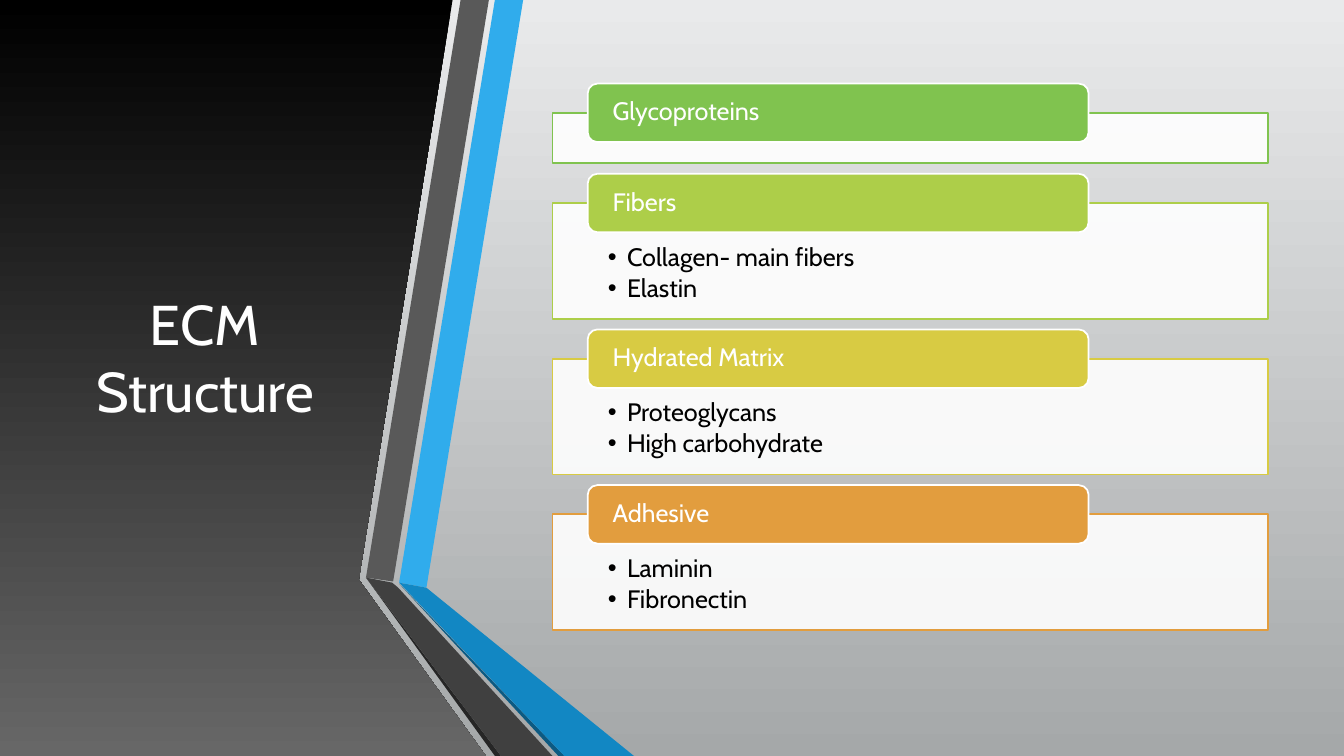
from dataclasses import dataclass

from lxml import etree
from pptx import Presentation
from pptx.dml.color import RGBColor
from pptx.enum import shapes, text
from pptx.oxml import ns
from pptx.util import Pt


@dataclass(frozen=True)
class Theme:
    font: str = "Cabin"
    title_size: float = 40
    body_size: float = 18
    outline: float = 1.25
    white: str = "FFFFFF"
    black: str = "000000"
    backdrop: tuple = ("E9EAEB", "A5A8A9")
    panel: tuple = ("000000", "676767")
    blue: str = "30ACEC"
    blue_low: str = "1287C3"
    blue_edge: str = "0C5A82"
    grey: str = "595959"
    grey_low: str = "404040"
    grey_edge: str = "262626"


THEME = Theme()

PANEL = [(0, 0), (323.3, 0), (256.3, 414), (347, 540), (0, 540)]
RIBBONS = [
    (THEME.blue, [(285.1, 416.2), (304.6, 419.8), (373.7, 0), (353.5, 0)]),
    (THEME.grey, [(349.2, 0), (329, 0), (261.4, 412.6), (280.8, 415.4)]),
    (THEME.grey_edge, [(261.4, 412.6), (353.5, 540), (357.8, 540)]),
    (THEME.blue_edge, [(285.1, 416.9), (398.9, 540), (403.2, 540)]),
    (THEME.blue_low, [(285.1, 416.2), (403.2, 540), (452.9, 540), (304.6, 419.8)]),
    (THEME.grey_low, [(394.6, 540), (284.4, 419.8), (280.1, 416.2), (261.4, 412.6),
                      (357.8, 540)]),
]
CARDS = [
    ("Glycoproteins", "80C34F", []),
    ("Fibers", "ADCE49", ["Collagen- main fibers", "Elastin"]),
    ("Hydrated Matrix", "D8CB43", ["Proteoglycans", "High carbohydrate"]),
    ("Adhesive", "E29D3E", ["Laminin", "Fibronectin"]),
]
CARD_LEFT, CARD_WIDTH, CARD_GAP = 394.6, 511.2, 28.4
FIRST_CARD_TOP, EMPTY_HEIGHT, LIST_HEIGHT = 80.6, 36, 82.8
TAB_LEFT, TAB_WIDTH, TAB_HEIGHT = 419.8, 357.8, 41.8


def apply(target, values):
    for name, value in values.items():
        setattr(target, name, value)


def shade(fill, colours):
    """Fill from top to bottom with two colours."""
    fill.gradient()
    fill.gradient_angle = 270
    for stop, colour in zip(fill.gradient_stops, colours):
        stop.color.rgb = RGBColor.from_string(colour)


def paint(shape, colour, line=None):
    shape.shadow.inherit = False
    shape.fill.solid()
    shape.fill.fore_color.rgb = RGBColor.from_string(colour)
    if line:
        shape.line.color.rgb = RGBColor.from_string(line)
        shape.line.width = Pt(THEME.outline)
    else:
        shape.line.fill.background()


def add_outline(page, points, colour):
    corners = [(Pt(x), Pt(y)) for x, y in points]
    builder = page.shapes.build_freeform(*corners[0], scale=1.0)
    builder.add_line_segments(corners[1:], close=True)
    shape = builder.convert_to_shape()
    paint(shape, colour)
    return shape


def set_opacity(shape, percent):
    colour = shape.fill._xPr.find(".//" + ns.qn("a:srgbClr"))
    etree.SubElement(colour, ns.qn("a:alpha"), val=str(percent * 1000))


def add_bullet(para):
    props = para._p.get_or_add_pPr()
    props.set("marL", str(Pt(13.7)))
    props.set("indent", str(-Pt(13.7)))
    etree.SubElement(props, ns.qn("a:buFont"), typeface="Arial")
    etree.SubElement(props, ns.qn("a:buChar"), char="•")


def write(box, lines, size, colour, frame_format, para_format, bullets=False):
    frame = box.text_frame
    apply(frame, {"word_wrap": True, **frame_format})
    for index, line in enumerate(lines):
        para = frame.paragraphs[0] if index == 0 else frame.add_paragraph()
        if bullets:
            add_bullet(para)
        apply(para, para_format)
        span = para.add_run()
        apply(span, {"text": line})
        apply(span.font, {"name": THEME.font, "size": Pt(size)})
        span.font.color.rgb = RGBColor.from_string(colour)


def add_title(page, title):
    box = page.shapes.add_textbox(Pt(42.5), Pt(54), Pt(208), Pt(401.8))
    write(box, [title], THEME.title_size, THEME.white,
          {"vertical_anchor": text.MSO_ANCHOR.MIDDLE},
          {"alignment": text.PP_ALIGN.CENTER})


def add_card(page, top, height, heading, colour, items):
    """Draw a translucent frame with a coloured heading tab over its top edge."""
    frame = page.shapes.add_shape(shapes.MSO_SHAPE.RECTANGLE, Pt(CARD_LEFT), Pt(top),
                                  Pt(CARD_WIDTH), Pt(height))
    paint(frame, THEME.white, colour)
    set_opacity(frame, 90)
    write(frame, items, THEME.body_size, THEME.black,
          {"vertical_anchor": text.MSO_ANCHOR.TOP, "margin_left": Pt(39.6),
           "margin_right": Pt(39.6), "margin_top": Pt(29.5), "margin_bottom": Pt(10)},
          {"alignment": text.PP_ALIGN.LEFT, "line_spacing": 0.9, "space_after": Pt(2.7)},
          bullets=True)

    tab = page.shapes.add_shape(shapes.MSO_SHAPE.ROUNDED_RECTANGLE, Pt(TAB_LEFT),
                                Pt(top - TAB_HEIGHT / 2), Pt(TAB_WIDTH), Pt(TAB_HEIGHT))
    paint(tab, colour, THEME.white)
    write(tab, [heading], THEME.body_size, THEME.white,
          {"vertical_anchor": text.MSO_ANCHOR.MIDDLE, "margin_left": Pt(15.8),
           "margin_right": Pt(15.8), "margin_top": 0, "margin_bottom": 0},
          {"alignment": text.PP_ALIGN.LEFT, "line_spacing": 0.9})


def main():
    deck = Presentation()
    apply(deck, {"slide_width": Pt(960), "slide_height": Pt(540)})
    page = deck.slides.add_slide(deck.slide_layouts[6])
    shade(page.background.fill, THEME.backdrop)

    panel = add_outline(page, PANEL, THEME.black)
    shade(panel.fill, THEME.panel)
    add_title(page, "ECM Structure")
    for colour, points in RIBBONS:
        add_outline(page, points, colour)

    top = FIRST_CARD_TOP
    for heading, colour, items in CARDS:
        height = LIST_HEIGHT if items else EMPTY_HEIGHT
        add_card(page, top, height, heading, colour, items)
        top += height + CARD_GAP

    deck.save("out.pptx")


if __name__ == "__main__":
    main()
